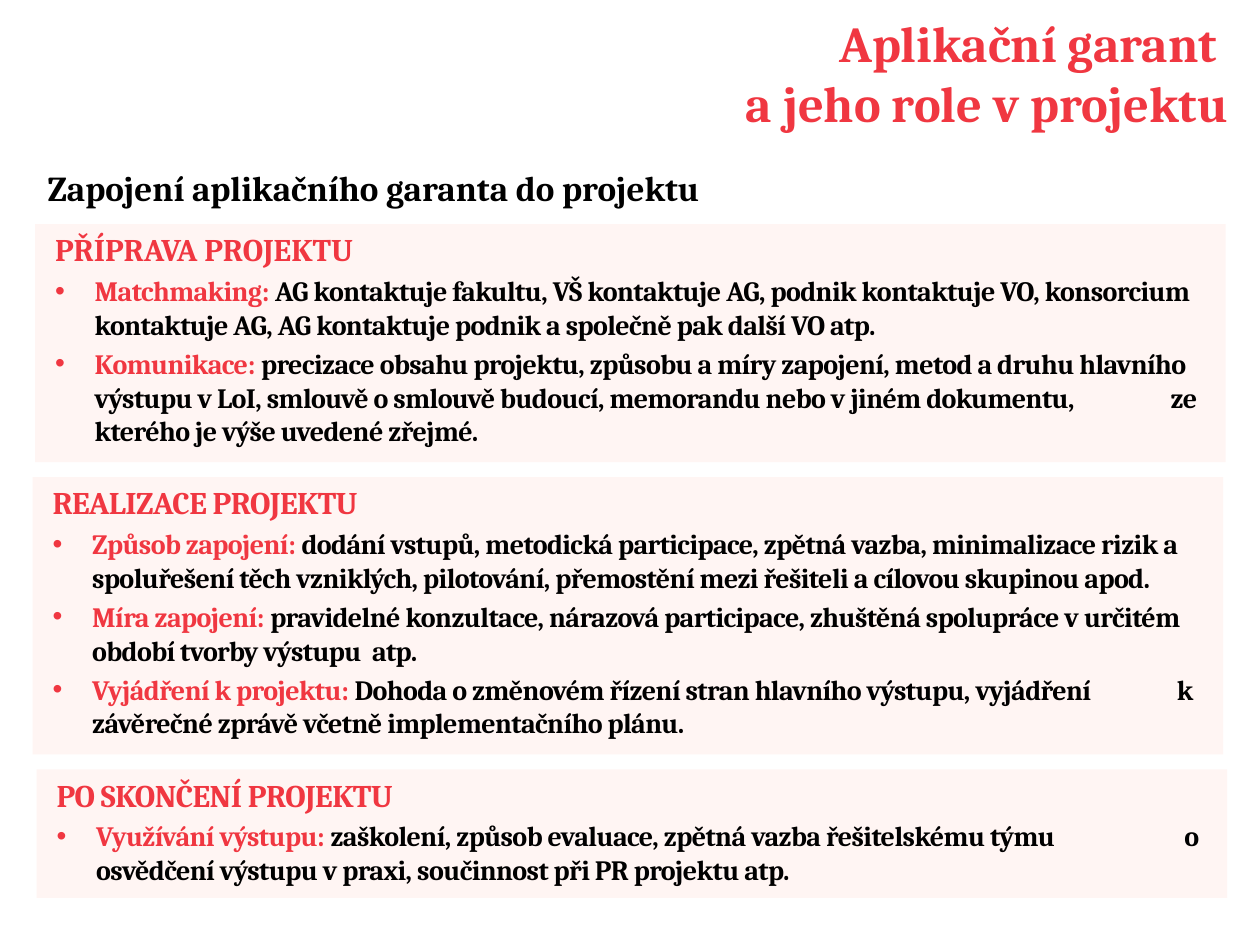
"""Build the slide on the application guarantor and its role in a project."""
from lxml import etree
from pptx import Presentation
from pptx.dml.color import RGBColor
from pptx.enum.shapes import MSO_SHAPE
from pptx.enum.text import MSO_ANCHOR, PP_ALIGN
from pptx.oxml.ns import qn
from pptx.util import Cm, Pt

RECTANGLE = MSO_SHAPE.RECTANGLE
TOP, MIDDLE = MSO_ANCHOR.TOP, MSO_ANCHOR.MIDDLE
LEFT, RIGHT = PP_ALIGN.LEFT, PP_ALIGN.RIGHT
COLORS = {"accent": "F03741", "text": "000000", "panel": "FFF5F3"}
TIGHT = -0.3
GAP = 0.3

SECTIONS = [
    ("PŘÍPRAVA PROJEKTU", 0, 0.71, 4.8, [
        ("Matchmaking: ", "AG kontaktuje fakultu, VŠ kontaktuje AG, podnik kontaktuje VO, konsorcium "
         "kontaktuje AG, AG kontaktuje podnik a společně pak další VO atp.", 0, ""),
        ("Komunikace: ", "precizace obsahu projektu, způsobu a míry zapojení, metod a druhu hlavního "
         "výstupu v LoI, smlouvě o smlouvě budoucí, memorandu nebo v jiném dokumentu,",
         50.8, "ze kterého je výše uvedené zřejmé."),
    ]),
    ("REALIZACE PROJEKTU", TIGHT, 0.66, 5.59, [
        ("Způsob zapojení: ", "dodání vstupů, metodická participace, zpětná vazba, minimalizace rizik a "
         "spoluřešení těch vzniklých, pilotování, přemostění mezi řešiteli a cílovou skupinou apod.", 0, ""),
        ("Míra zapojení: ", "pravidelné konzultace, nárazová participace, zhuštěná spolupráce v určitém "
         "období tvorby výstupu  atp.", 0, ""),
        ("Vyjádření k projektu: ", "Dohoda o změnovém řízení stran hlavního výstupu, vyjádření",
         45.1, "k závěrečné zprávě včetně implementačního plánu."),
    ]),
    ("PO SKONČENÍ PROJEKTU", TIGHT, 0.74, 2.59, [
        ("Využívání výstupu: ", "zaškolení, způsob evaluace, zpětná vazba řešitelskému týmu",
         70.2, "o osvědčení výstupu v praxi, součinnost při PR projektu atp."),
    ]),
]


def add_text(paragraph, text, size, color, spacing=0):
    run = paragraph.add_run()
    run.text = text
    for name, value in {"name": "Cambria", "size": Pt(size), "bold": True}.items():
        setattr(run.font, name, value)
    run.font.color.rgb = RGBColor.from_string(COLORS[color])
    if spacing:
        run._r.get_or_add_rPr().set("spc", str(round(spacing * 100)))


def indent(paragraph, margin, hanging):
    properties = paragraph._p.get_or_add_pPr()
    properties.set("marL", str(Cm(margin)))
    properties.set("indent", str(-Cm(hanging)))
    return properties


presentation = Presentation()
presentation.slide_width, presentation.slide_height = Cm(25.4), Cm(19.05)
slide = presentation.slides.add_slide(presentation.slide_layouts[5])

title = slide.shapes.title
title_place = {"left": Cm(0.3), "top": Cm(0), "width": Cm(24.71), "height": Cm(2.92)}
for name, value in title_place.items():
    setattr(title, name, value)
title.text_frame.vertical_anchor = MIDDLE
title_lines = title.text_frame.paragraphs[0]
title_lines.alignment = RIGHT
add_text(title_lines, "Aplikační garant ", 28.8, "accent")
title_lines.add_line_break()
add_text(title_lines, "a jeho role v projektu", 28.8, "accent")

subtitle = slide.shapes.add_textbox(Cm(0.71), Cm(3.23), Cm(19.1), Cm(1.12))
subtitle.text_frame.word_wrap = True
add_text(subtitle.text_frame.paragraphs[0], "Zapojení aplikačního garanta do projektu", 20, "text")

panel_top = 4.52
for heading, heading_spacing, panel_left, panel_height, points in SECTIONS:
    panel = slide.shapes.add_shape(RECTANGLE, Cm(panel_left), Cm(panel_top), Cm(24), Cm(panel_height))
    panel.shadow.inherit = False
    panel.fill.solid()
    panel.fill.fore_color.rgb = RGBColor.from_string(COLORS["panel"])
    panel.line.fill.background()
    frame = panel.text_frame
    frame.word_wrap = True
    frame.vertical_anchor = TOP
    heading_line = frame.paragraphs[0]
    heading_line.alignment = LEFT
    indent(heading_line, 0.15, 0)
    add_text(heading_line, heading, 18, "accent", heading_spacing)

    for label, detail, gap_width, continuation in points:
        point = frame.add_paragraph()
        point.alignment = LEFT
        point.space_before = Pt(3.2)
        properties = indent(point, 0.95, 0.8)
        etree.SubElement(properties, qn("a:buFont"), typeface="Arial")
        etree.SubElement(properties, qn("a:buChar"), char="•")
        add_text(point, label, 16, "accent", TIGHT)
        add_text(point, detail, 16, "text", TIGHT)
        if continuation:
            add_text(point, " ", 16, "text", gap_width)
            add_text(point, continuation, 16, "text", TIGHT)
    panel_top += panel_height + GAP

presentation.save("out.pptx")
